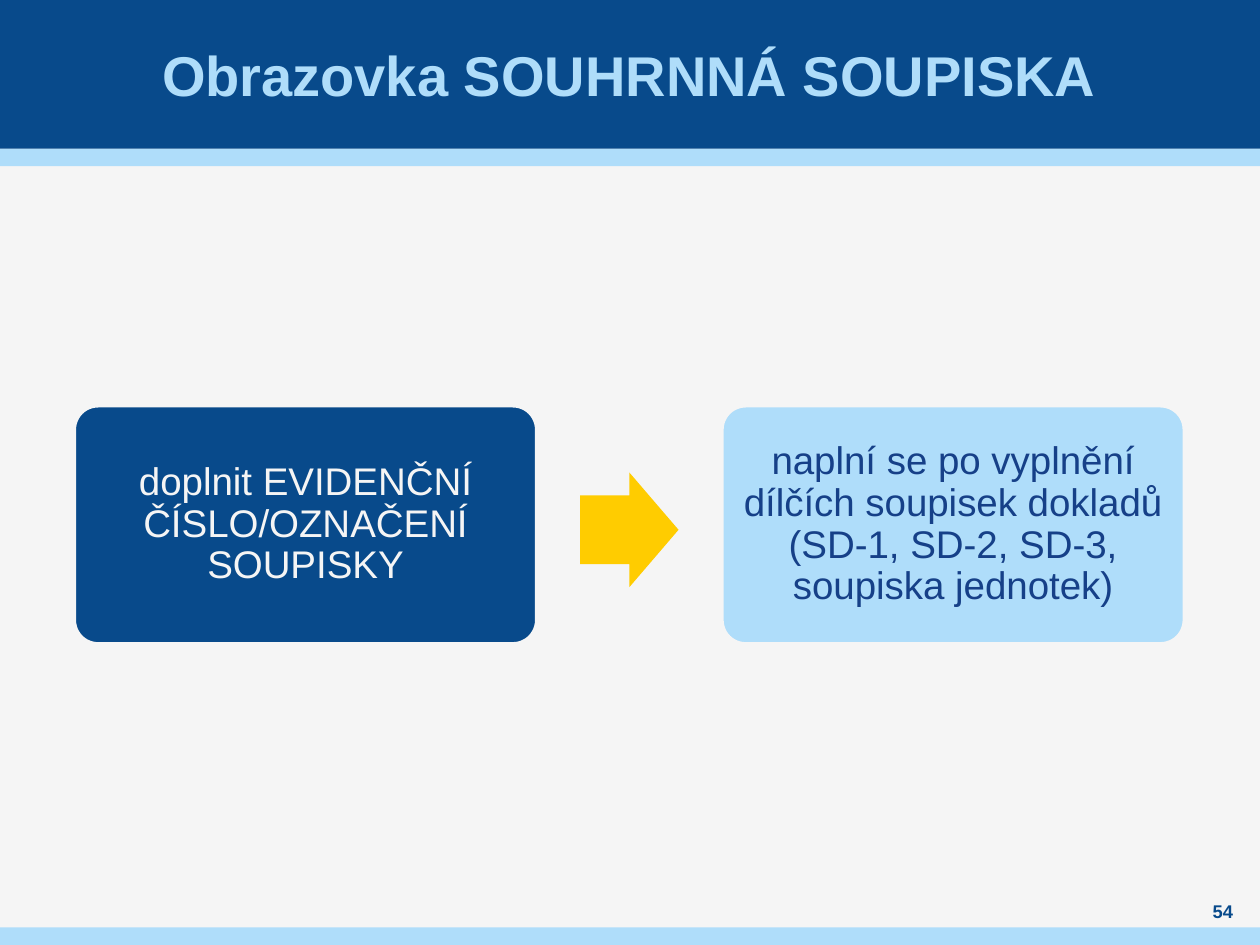
from pptx import Presentation
from pptx.dml.color import RGBColor
from pptx.enum.shapes import MSO_SHAPE
from pptx.enum.text import MSO_ANCHOR, PP_ALIGN
from pptx.util import Inches, Pt

NAVY = RGBColor(0x08, 0x4A, 0x8B)
SKY = RGBColor(0xAF, 0xDD, 0xFA)
PALE = RGBColor(0xF5, 0xF5, 0xF5)
GOLD = RGBColor(0xFF, 0xCC, 0x00)
INK = RGBColor(0x16, 0x40, 0x88)

WIDE, HIGH = 10, 7.5
HEAD, BAND = 1.18, 0.14
STEPS = [
    ("doplnit EVIDENČNÍ ČÍSLO/OZNAČENÍ SOUPISKY", NAVY, PALE),
    ("naplní se po vyplnění dílčích soupisek dokladů "
     "(SD-1, SD-2, SD-3, soupiska jednotek)", SKY, INK),
]


def place(shape, left, top, width, height):
    shape.left, shape.top = Inches(left), Inches(top)
    shape.width, shape.height = Inches(width), Inches(height)


def write(shape, text, size, color, bold=False, pad=(0, 0), gap=1.0):
    """Set centred text; pad is the side and the top/bottom inset."""
    frame = shape.text_frame
    frame.word_wrap = True
    frame.vertical_anchor = MSO_ANCHOR.MIDDLE
    frame.margin_left = frame.margin_right = Inches(pad[0])
    frame.margin_top = frame.margin_bottom = Inches(pad[1])
    para = frame.paragraphs[0]
    para.alignment = PP_ALIGN.CENTER
    para.line_spacing = gap
    run = para.add_run()
    run.text = text
    font = run.font
    font.name, font.size, font.bold = "Arial", Pt(size), bold
    font.color.rgb = color


def draw(slide, kind, box, fill, line=None):
    shape = slide.shapes.add_shape(kind, *map(Inches, box))
    shape.shadow.inherit = False
    shape.fill.solid()
    shape.fill.fore_color.rgb = fill
    if line is None:
        shape.line.fill.background()
    else:
        shape.line.color.rgb = line
        shape.line.width = Pt(2)
    return shape


def header(slide, left, top, width, height):
    draw(slide, MSO_SHAPE.RECTANGLE, (left, top + height, width, BAND), SKY)
    draw(slide, MSO_SHAPE.RECTANGLE, (left, top, width, height), NAVY)
    title = slide.shapes.title
    place(title, left + 0.39, top, width - 0.79, height)
    write(title, "Obrazovka SOUHRNNÁ SOUPISKA", 32, SKY, bold=True, pad=(0.04, 0))
    # The title must lie in front of the bands.
    title.element.getparent().append(title.element)


def flow(slide, left, top, width, height):
    """Place the steps side by side with an arrow in each gap."""
    card = 3.67
    pitch = (width - card) / (len(STEPS) - 1)
    wide, high = 0.78, 0.91
    for i, (text, fill, color) in enumerate(STEPS):
        x = left + i * pitch
        if i:
            mid = x - (pitch - card) / 2
            box = (mid - wide / 2, top + (height - high) / 2 + 0.04, wide, high)
            arrow = draw(slide, MSO_SHAPE.RIGHT_ARROW, box, GOLD)
            arrow.adjustments[0] = 0.6
            arrow.adjustments[1] = 0.5
        step = draw(slide, MSO_SHAPE.ROUNDED_RECTANGLE, (x, top, card, height), fill, PALE)
        step.adjustments[0] = 0.1
        write(step, text, 22, color, pad=(0.09, 0.09), gap=0.9)


def footer(slide, left, top, width, height):
    draw(slide, MSO_SHAPE.RECTANGLE, (left, top, width, height), SKY)
    box = (left + width - 0.55, top - 0.23, 0.51, 0.2)
    number = slide.shapes.add_textbox(*map(Inches, box))
    write(number, "54", 10.5, NAVY, bold=True)


def main():
    deck = Presentation()
    deck.slide_width, deck.slide_height = Inches(WIDE), Inches(HIGH)
    slide = deck.slides.add_slide(deck.slide_layouts[5])
    back = slide.background.fill
    back.solid()
    back.fore_color.rgb = PALE
    header(slide, 0, 0, WIDE, HEAD)
    flow(slide, 0.59, 3.22, 8.81, 1.89)
    footer(slide, 0, HIGH - BAND, WIDE, BAND)
    deck.save("out.pptx")


if __name__ == "__main__":
    main()
